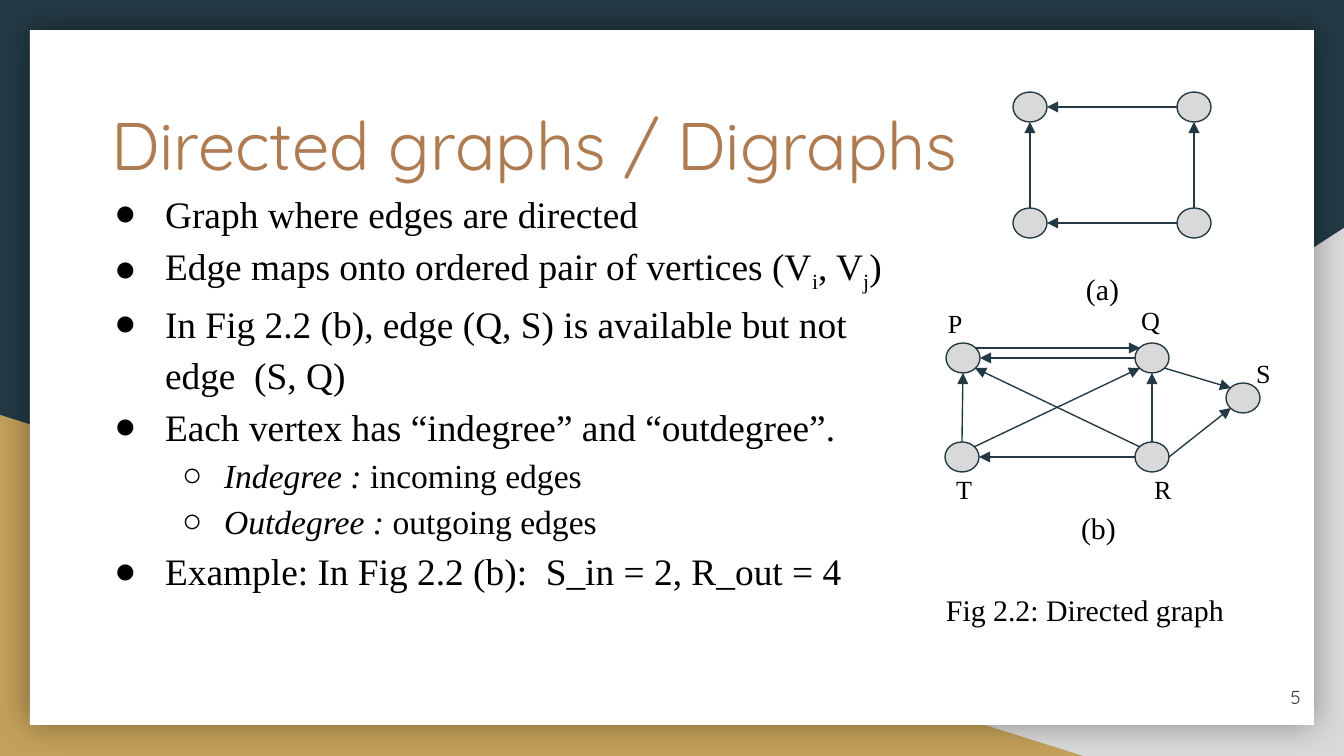
from lxml import etree
from pptx import Presentation, util as u
from pptx.dml.color import RGBColor
from pptx.enum import shapes, text
from pptx.oxml import ns

SCALE = 914400 / 134.4
NAVY = RGBColor(0x23, 0x3A, 0x44)
GOLD = RGBColor(0xC4, 0xA1, 0x5A)
BROWN = RGBColor(0xAF, 0x7B, 0x51)
GREY = RGBColor(0xD9, 0xD9, 0xD9)
WHITE = RGBColor(0xFF, 0xFF, 0xFF)
BLACK = RGBColor(0, 0, 0)
SERIF = "Times New Roman"
SANS = "Quicksand"
NODE_WIDTH, NODE_HEIGHT = 34, 30
SITES = {"N": (0, -15), "NE": (12, -10), "E": (17, 0), "SE": (12, 10),
         "S": (0, 15), "SW": (-12, 10), "W": (-17, 0), "NW": (-12, -10)}
LEVELS = [("●", 71, -51, 20), ("○", 130, -42, 18)]
BULLETS = [
    (0, [("Graph where edges are directed", {})]),
    (0, [("Edge maps onto ordered pair of vertices (V", {}), ("i", {"sub": True}),
         (", V", {}), ("j", {"sub": True}), (")", {})]),
    (0, [("In Fig 2.2 (b), edge (Q, S) is available but not edge  (S, Q)", {})]),
    (0, [("Each vertex has “indegree” and “outdegree”.", {})]),
    (1, [("Indegree : ", {"italic": True}), ("incoming edges", {})]),
    (1, [("Outdegree : ", {"italic": True}), ("outgoing edges", {})]),
    (0, [("Example: In Fig 2.2 (b):  S_in = 2, R_out = 4", {})]),
]
SQUARE_NODES = {"A": (1030, 107), "B": (1194, 107), "C": (1030, 223), "D": (1194, 223)}
SQUARE_EDGES = ["B W A E", "D W C E", "C N A S", "D N B S"]
LETTER_NODES = {"P": (963, 358), "Q": (1152, 358), "T": (962, 457),
                "R": (1152, 457), "S": (1243, 398)}
LETTER_EDGES = ["P NE Q NW", "Q W P E", "R W T E", "R NW P SE", "T NE Q SW",
                "T N P S", "R E S SW", "Q SE S NW", "R N Q S"]
LETTER_PLACES = {"P": (935, 294), "Q": (1128, 291), "S": (1243, 344),
                 "T": (943, 460), "R": (1141, 460)}


def px(value):
    return round(value * SCALE)


def set_values(target, values):
    for name, value in values.items():
        setattr(target, name, value)


def add_xml(parent, tag, **values):
    child = etree.SubElement(parent, ns.qn(tag))
    for name, value in values.items():
        child.set(name, str(value))
    return child


def add_span(para, words, size, font=SERIF, color=BLACK, italic=False, sub=False):
    span = para.add_run()
    span.text = words
    set_values(span.font, {"size": u.Pt(size), "name": font, "italic": italic, "bold": False})
    span.font.color.rgb = color
    if sub:
        span.font._element.set("baseline", "-25000")


def set_frame(box, inset=13, anchor=text.MSO_ANCHOR.TOP, wrap=True):
    margins = {f"margin_{side}": px(inset) for side in ("left", "right", "top", "bottom")}
    set_values(box.text_frame, {"word_wrap": wrap, "auto_size": text.MSO_AUTO_SIZE.NONE,
                                "vertical_anchor": anchor, **margins})


def add_label(page, words, area, size, align=text.PP_ALIGN.LEFT, font=SERIF,
              color=BLACK, **frame_values):
    box = page.shapes.add_textbox(*map(px, area))
    set_frame(box, **frame_values)
    para = box.text_frame.paragraphs[0]
    para.alignment = align
    add_span(para, words, size, font, color)


def add_solid(page, kind, area, fill, line=None):
    shape = page.shapes.add_shape(kind, *map(px, area))
    shape.shadow.inherit = False
    shape.fill.solid()
    shape.fill.fore_color.rgb = fill
    if line is None:
        shape.line.fill.background()
    else:
        shape.line.color.rgb = line
        shape.line.width = u.Pt(0.75)
    return shape


def add_backdrop(page):
    page.background.fill.solid()
    page.background.fill.fore_color.rgb = NAVY
    triangle = shapes.MSO_SHAPE.RIGHT_TRIANGLE
    right = add_solid(page, triangle, (527, 228, 817, 528), GREY)
    right._element.spPr.find(ns.qn("a:xfrm")).set("flipH", "1")
    add_solid(page, triangle, (0, 415, 1083, 341), GOLD)
    card = add_solid(page, shapes.MSO_SHAPE.RECTANGLE, (30, 30, 1284, 695), WHITE)
    effects = card._element.spPr.find(ns.qn("a:effectLst"))
    shadow = add_xml(effects, "a:outerShdw", blurRad=u.Pt(18), dist=0, dir=0,
                     algn="ctr", rotWithShape=0)
    add_xml(add_xml(shadow, "a:srgbClr", val=BLACK), "a:alpha", val=40000)


def place(page, box, area):
    left, top, width, height = map(px, area)
    set_values(box, {"left": left, "top": top, "width": width, "height": height})
    set_frame(box)
    page.shapes._spTree.append(box._element)


def fill_title(page, words):
    title = page.shapes.title
    place(page, title, (98, 90, 931, 82))
    para = title.text_frame.paragraphs[0]
    para.alignment = text.PP_ALIGN.LEFT
    add_span(para, words, 36, SANS, BROWN)


def fill_body(page, items):
    body = page.placeholders[1]
    place(page, body, (81, 171, 821, 480))
    frame = body.text_frame
    for index, (level, spans) in enumerate(items):
        para = frame.add_paragraph() if index else frame.paragraphs[0]
        set_values(para, {"level": level, "line_spacing": 1.15,
                          "space_before": u.Pt(0), "space_after": u.Pt(0)})
        mark, margin, indent, size = LEVELS[level]
        props = para._p.get_or_add_pPr()
        props.set("marL", str(px(margin)))
        props.set("indent", str(px(indent)))
        add_xml(add_xml(props, "a:buClr"), "a:srgbClr", val=BLACK)
        add_xml(props, "a:buFont", typeface=SERIF)
        add_xml(props, "a:buChar", char=mark)
        for words, style in spans:
            add_span(para, words, size, **style)


def add_arrow(page, start, end):
    arrow = page.shapes.add_connector(shapes.MSO_CONNECTOR.STRAIGHT, *map(px, start + end))
    arrow.line.color.rgb = NAVY
    arrow.line.width = u.Pt(0.75)
    add_xml(arrow.line._get_or_add_ln(), "a:tailEnd", type="triangle", w="med", len="med")
    add_xml(arrow._element.spPr, "a:effectLst")


def add_graph(page, nodes, edges):
    for x, y in nodes.values():
        area = (x - NODE_WIDTH // 2, y - NODE_HEIGHT // 2, NODE_WIDTH, NODE_HEIGHT)
        add_solid(page, shapes.MSO_SHAPE.OVAL, area, GREY, NAVY)

    def site(node, side):
        return tuple(a + b for a, b in zip(nodes[node], SITES[side]))

    for edge in edges:
        source, source_side, target, target_side = edge.split()
        add_arrow(page, site(source, source_side), site(target, target_side))


def main():
    deck = Presentation()
    set_values(deck, {"slide_width": px(1344), "slide_height": px(756)})
    page = deck.slides.add_slide(deck.slide_layouts[1])
    add_backdrop(page)
    fill_title(page, "Directed graphs / Digraphs")
    fill_body(page, BULLETS)
    add_label(page, "5", (1234, 668, 80, 58), 10, text.PP_ALIGN.RIGHT, SANS, NAVY,
              anchor=text.MSO_ANCHOR.MIDDLE)
    add_graph(page, LETTER_NODES, LETTER_EDGES)
    add_graph(page, SQUARE_NODES, SQUARE_EDGES)
    add_label(page, "Fig 2.2: Directed graph", (933, 579, 349, 47), 16)
    for letter, corner in LETTER_PLACES.items():
        add_label(page, letter, corner + (54, 47), 14)
    for words, corner in {"(a)": (1076, 261), "(b)": (1071, 500)}.items():
        add_label(page, words, corner + (61, 50), 16, inset=10, wrap=False)
    deck.save("out.pptx")


if __name__ == "__main__":
    main()
